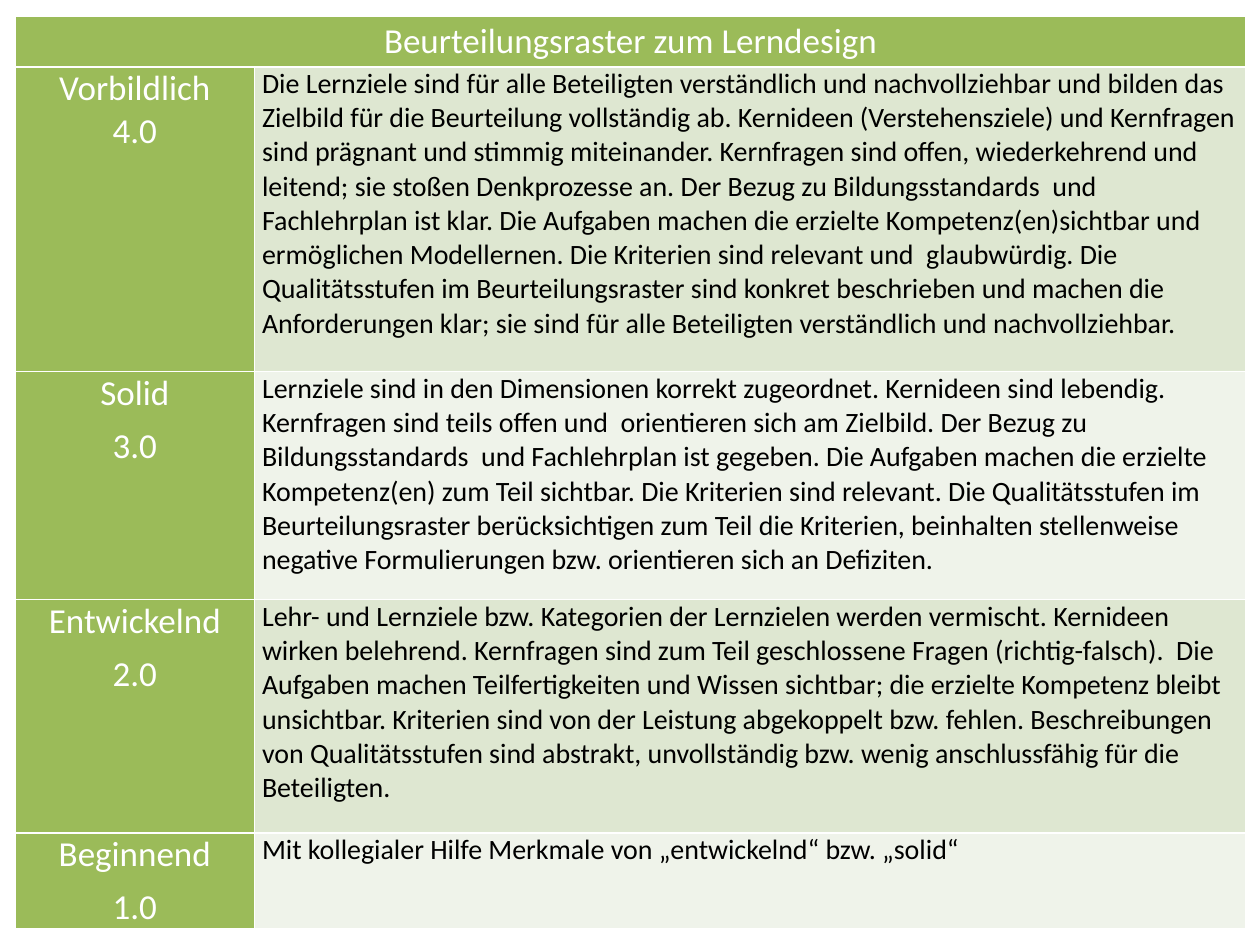
from lxml import etree
from pptx import Presentation
from pptx import util as u
from pptx.dml.color import RGBColor
from pptx.enum import text
from pptx.oxml.ns import qn

TITLE = "Beurteilungsraster zum Lerndesign"
# level, score, space after each label line, row height, description
LEVELS = [
    ("Vorbildlich", "4.0", 0, 2.42,
     "Die Lernziele sind für alle Beteiligten verständlich und nachvollziehbar und bilden das "
     "Zielbild für die Beurteilung vollständig ab. Kernideen (Verstehensziele) und Kernfragen "
     "sind prägnant und stimmig miteinander. Kernfragen sind offen, wiederkehrend und leitend; "
     "sie stoßen Denkprozesse an. Der Bezug zu Bildungsstandards  und Fachlehrplan ist klar. "
     "Die Aufgaben machen die erzielte Kompetenz(en)sichtbar und ermöglichen Modellernen. "
     "Die Kriterien sind relevant und  glaubwürdig. Die Qualitätsstufen im Beurteilungsraster "
     "sind konkret beschrieben und machen die Anforderungen klar; sie sind für alle Beteiligten "
     "verständlich und nachvollziehbar."),
    ("Solid", "3.0", 6, 1.81,
     "Lernziele sind in den Dimensionen korrekt zugeordnet. Kernideen sind lebendig. "
     "Kernfragen sind teils offen und  orientieren sich am Zielbild. Der Bezug zu "
     "Bildungsstandards  und Fachlehrplan ist gegeben. Die Aufgaben machen die erzielte "
     "Kompetenz(en) zum Teil sichtbar. Die Kriterien sind relevant. Die Qualitätsstufen im "
     "Beurteilungsraster berücksichtigen zum Teil die Kriterien, beinhalten stellenweise "
     "negative Formulierungen bzw. orientieren sich an Defiziten."),
    ("Entwickelnd", "2.0", 6, 1.85,
     "Lehr- und Lernziele bzw. Kategorien der Lernzielen werden vermischt. Kernideen wirken "
     "belehrend. Kernfragen sind zum Teil geschlossene Fragen (richtig-falsch).  Die Aufgaben "
     "machen Teilfertigkeiten und Wissen sichtbar; die erzielte Kompetenz bleibt unsichtbar. "
     "Kriterien sind von der Leistung abgekoppelt bzw. fehlen. Beschreibungen von "
     "Qualitätsstufen sind abstrakt, unvollständig bzw. wenig anschlussfähig für die "
     "Beteiligten."),
    ("Beginnend", "1.0", 6, 0.58,
     "Mit kollegialer Hilfe Merkmale von „entwickelnd“ bzw. „solid“"),
]
LEFT, TOP = 0.12, 0.13
COLUMNS = [1.9, 7.87]
HEADER_HEIGHT = 0.4
GREEN, WHITE, BLACK = "9BBB59", "FFFFFF", "000000"
BANDS = ["DEE7D1", "EFF3EA"]


def rgb(value):
    return RGBColor.from_string(value)


def add_borders(cell):
    for side in "LRTB":
        ln = etree.SubElement(cell._tc.get_or_add_tcPr(), qn(f"a:ln{side}"), w=str(u.Pt(1)))
        fill = etree.SubElement(ln, qn("a:solidFill"))
        etree.SubElement(fill, qn("a:srgbClr"), val=WHITE)


def fill_cell(cell, lines, fill, color, size, align, after=0):
    add_borders(cell)
    cell.fill.solid()
    cell.fill.fore_color.rgb = rgb(fill)
    cell.margin_left = cell.margin_right = u.Inches(0.06)
    cell.margin_top = cell.margin_bottom = 0
    tf = cell.text_frame
    tf.text = "\n".join(lines)
    for p in tf.paragraphs:
        p.alignment = align
        p.space_after = u.Pt(after)
        for r in p.runs:
            r.font.name = "Calibri"
            r.font.size = u.Pt(size)
            r.font.color.rgb = rgb(color)


prs = Presentation()
prs.slide_width, prs.slide_height = u.Inches(10), u.Inches(7.5)
s = prs.slides.add_slide(prs.slide_layouts[6])

heights = [HEADER_HEIGHT] + [level[3] for level in LEVELS]
box = [u.Inches(n) for n in (LEFT, TOP, sum(COLUMNS), sum(heights))]
table = s.shapes.add_table(len(heights), len(COLUMNS), *box).table
for column, width in zip(table.columns, COLUMNS):
    column.width = u.Inches(width)
for row, height in zip(table.rows, heights):
    row.height = u.Inches(height)

CENTER, START = text.PP_ALIGN.CENTER, text.PP_ALIGN.LEFT
header = table.cell(0, 0)
header.merge(table.cell(0, 1))
fill_cell(header, [TITLE], GREEN, WHITE, 20, CENTER)
header.vertical_anchor = text.MSO_ANCHOR.MIDDLE

for i, (name, score, after, _, description) in enumerate(LEVELS):
    fill_cell(table.cell(i + 1, 0), [name, score], GREEN, WHITE, 20, CENTER, after)
    fill_cell(table.cell(i + 1, 1), [description], BANDS[i % 2], BLACK, 16, START, 6)

prs.save("out.pptx")
